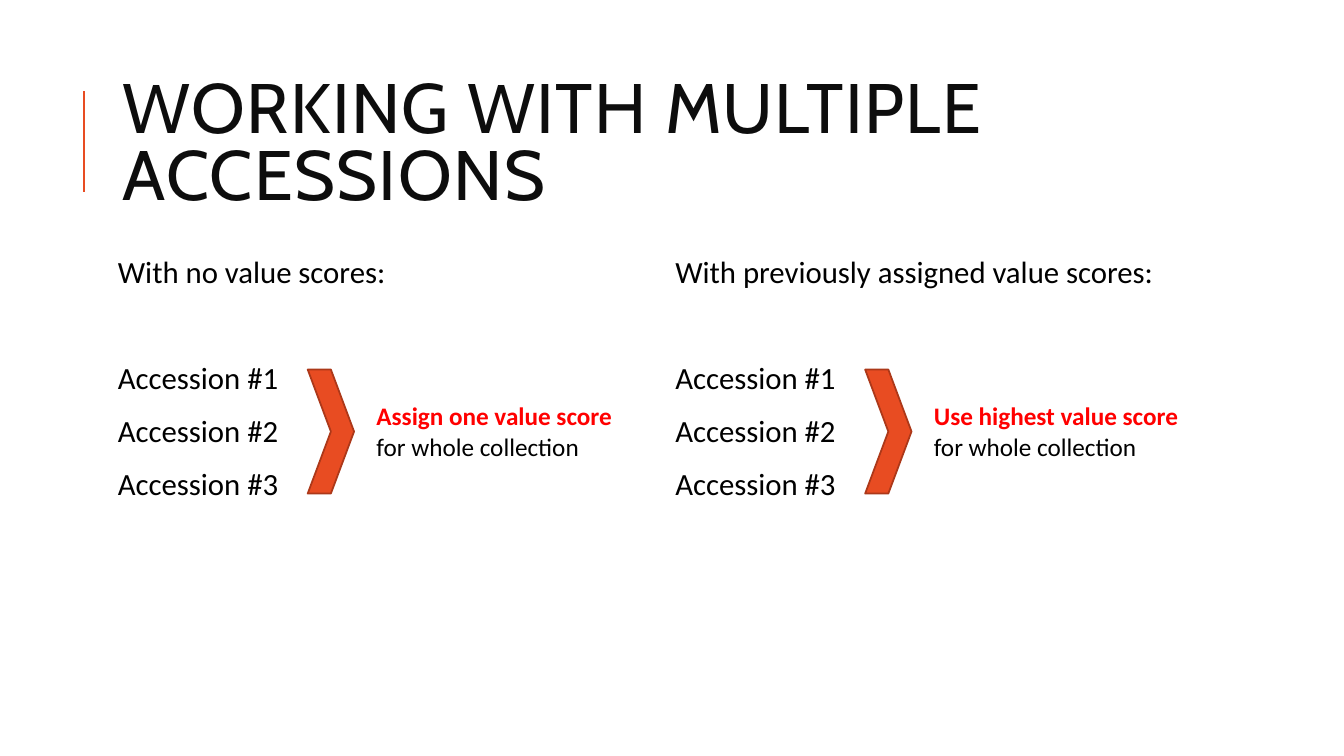
from pptx import Presentation
from pptx.dml.color import RGBColor
from pptx.enum.shapes import MSO_CONNECTOR, MSO_SHAPE
from pptx.enum.text import MSO_ANCHOR
from pptx.oxml.ns import qn
from pptx.util import Inches, Pt
from lxml.etree import SubElement

COLORS = {
    "accent": "E84C22",
    "outline": "AC3819",
    "title": "0D0D0D",
    "text": "000000",
    "emphasis": "FF0000",
}
CELL = Inches(1 / 12)  # the slide is a grid of 160 columns by 90 rows
COLUMN_LEFTS = (13.44, 79.8)
COLUMN_TOP = 30
HEADINGS = ("With no value scores:", "With previously assigned value scores:")
ADVICE = ("Assign one value score ", "Use highest value score ")
ACCESSIONS = [f"Accession #{number}" for number in (1, 2, 3)]


def color(name):
    return RGBColor.from_string(COLORS[name])


def grid(*cells):
    return [round(CELL * cell) for cell in cells]


def add_text(slide, box, paragraphs, size, font="Calibri", inset=None,
             anchor=MSO_ANCHOR.TOP, line_spacing=None, gaps=(), after=0,
             tracking=None):
    """Write paragraphs, each a list of (text, color name, bold) runs.

    gaps holds the space before each paragraph, in points.
    """
    frame = slide.shapes.add_textbox(*grid(*box)).text_frame
    frame.word_wrap = True
    frame.vertical_anchor = anchor
    if inset is not None:
        frame.margin_left = frame.margin_right = Inches(inset)
        frame.margin_top = frame.margin_bottom = Inches(inset)
    for index, runs in enumerate(paragraphs):
        paragraph = frame.add_paragraph() if index else frame.paragraphs[0]
        paragraph.line_spacing = line_spacing
        paragraph.space_before = Pt(gaps[index] if gaps else 0)
        paragraph.space_after = Pt(after)
        for text, color_name, bold in runs:
            run = paragraph.add_run()
            run.text = text
            run.font.name = font
            run.font.size = Pt(size)
            run.font.bold = bold
            run.font.color.rgb = color(color_name)
            if tracking:
                run.font._element.set("spc", str(tracking * 100))


def add_title(slide, text):
    left, top, bottom = grid(10, 10.8, 22.8)
    rule = slide.shapes.add_connector(
        MSO_CONNECTOR.STRAIGHT, left, bottom, left, top)
    rule.line.color.rgb = color("accent")
    rule.line.width = Pt(1.5)
    SubElement(rule._element.spPr, qn("a:effectLst"))
    add_text(slide, (COLUMN_LEFTS[0], 7.68, 127.56, 19.68),
             [[(text, "title", False)]], size=50, font="Cabin",
             anchor=MSO_ANCHOR.MIDDLE, line_spacing=0.8, tracking=1)


def add_chevron(slide, box):
    chevron = slide.shapes.add_shape(MSO_SHAPE.CHEVRON, *grid(*box))
    chevron.shadow.inherit = False
    chevron.fill.solid()
    chevron.fill.fore_color.rgb = color("accent")
    chevron.line.color.rgb = color("outline")
    chevron.line.width = Pt(1.25)


def add_case(slide, left, heading, advice):
    """Add a column: heading, accessions, chevron and advice."""
    lines = [[(text, "text", False)] for text in (heading, *ACCESSIONS)]
    add_text(slide, (left, COLUMN_TOP, 62.4, 52.8), lines, size=22,
             inset=0.05, line_spacing=0.9, gaps=(0, 50, 12, 12), after=2)
    add_chevron(slide, (left + 23.2, COLUMN_TOP + 14, 5.52, 14.76))
    add_text(slide, (left + 30.2, COLUMN_TOP + 17.1, 32.4, 8.5),
             [[(advice, "emphasis", True),
               ("for whole collection", "text", False)]], size=18)


def main():
    presentation = Presentation()
    presentation.slide_width, presentation.slide_height = grid(160, 90)
    slide = presentation.slides.add_slide(presentation.slide_layouts[6])
    add_title(slide, "WORKING WITH MULTIPLE ACCESSIONS")
    for left, heading, advice in zip(COLUMN_LEFTS, HEADINGS, ADVICE):
        add_case(slide, left, heading, advice)
    presentation.save("out.pptx")


if __name__ == "__main__":
    main()
